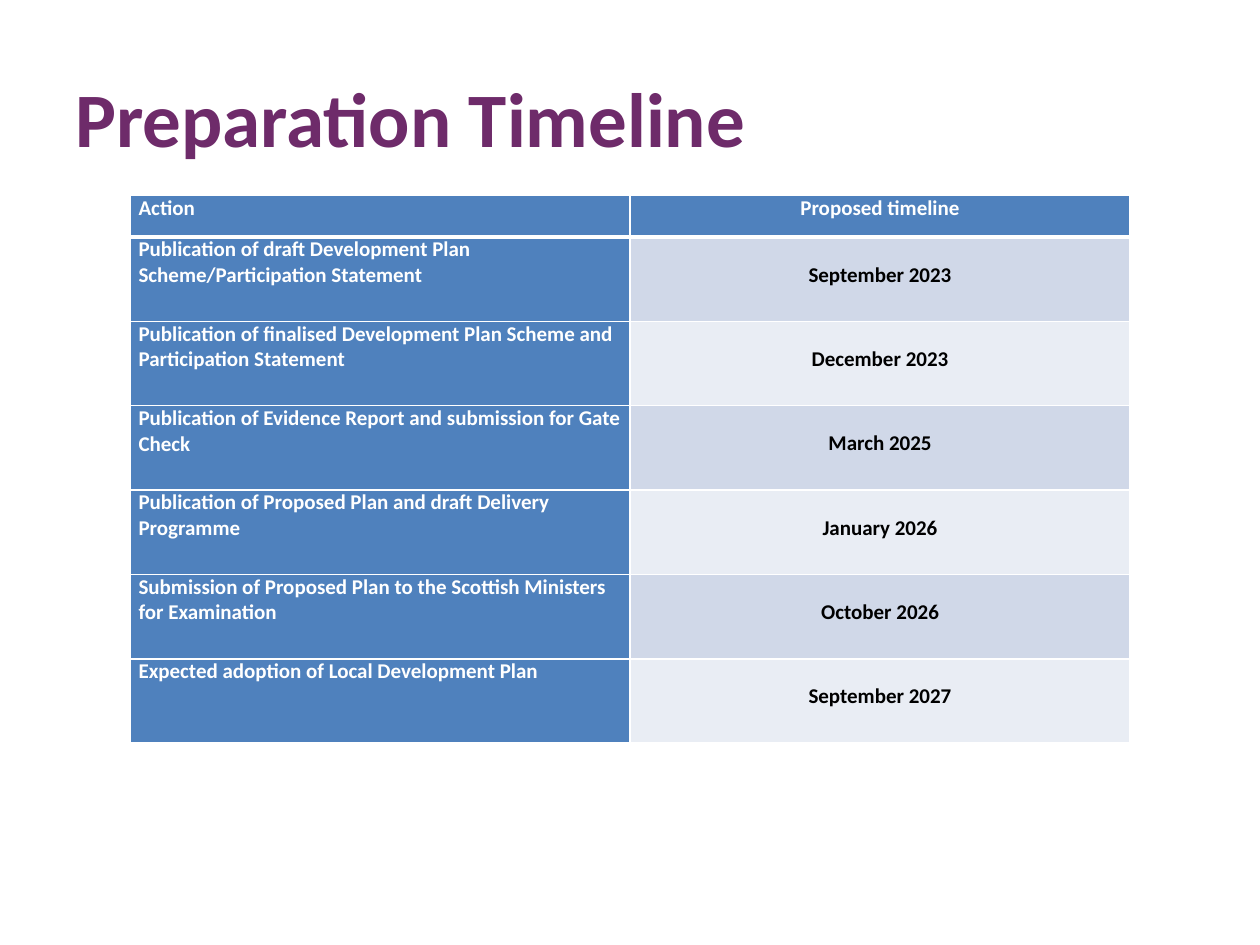
from typing import NamedTuple

from lxml import etree
from pptx import Presentation
from pptx.dml.color import RGBColor
from pptx.enum import text
from pptx.oxml import ns
from pptx.util import Inches, Pt

FONT = "Calibri"
HEX = {
    "plum": "6E2B6A",
    "blue": "4F81BD",
    "dark": "D0D8E8",
    "light": "E9EDF4",
    "white": "FFFFFF",
    "black": "000000",
}
LEFT, MID = text.PP_ALIGN.LEFT, text.PP_ALIGN.CENTER


class Step(NamedTuple):
    action: str
    date: str


class Look(NamedTuple):
    fill: str
    ink: str
    align: text.PP_ALIGN
    inset: float = 0


HEAD = Step("Action", "Proposed timeline")
STEPS = [
    Step("Publication of draft Development Plan Scheme/Participation Statement", "September 2023"),
    Step("Publication of finalised Development Plan Scheme and Participation Statement",
         "December 2023"),
    Step("Publication of Evidence Report and submission for Gate Check", "March 2025"),
    Step("Publication of Proposed Plan and draft Delivery Programme", "January 2026"),
    Step("Submission of Proposed Plan to the Scottish Ministers for Examination", "October 2026"),
    Step("Expected adoption of Local Development Plan", "September 2027"),
]


def write(frame, words: str, size: int, ink: str, align: text.PP_ALIGN) -> None:
    para = frame.paragraphs[0]
    para.alignment = align
    run = para.add_run()
    run.text = words
    run.font.name = FONT
    run.font.size = Pt(size)
    run.font.bold = True
    run.font.color.rgb = RGBColor.from_string(HEX[ink])


def edge(cell, top: int, bottom: int) -> None:
    """Draw white cell borders; top and bottom are widths in points."""
    props = cell._tc.get_or_add_tcPr()
    for side, width in {"L": 1, "R": 1, "T": top, "B": bottom}.items():
        line = etree.SubElement(props, ns.qn(f"a:ln{side}"), w=str(Pt(width)))
        solid = etree.SubElement(line, ns.qn("a:solidFill"))
        etree.SubElement(solid, ns.qn("a:srgbClr"), val=HEX["white"])


def paint(cell, words: str, look: Look, row: int) -> None:
    edge(cell, 3 if row == 1 else 1, 3 if row == 0 else 1)
    cell.fill.solid()
    cell.fill.fore_color.rgb = RGBColor.from_string(HEX[look.fill])
    cell.margin_left = cell.margin_right = Inches(0.07)
    cell.margin_top, cell.margin_bottom = Inches(look.inset), 0
    write(cell.text_frame, words, 12, look.ink, look.align)


def add_title(slide) -> None:
    box = slide.shapes.add_textbox(Inches(0.5), Inches(0.3), Inches(9), Inches(1.25))
    frame = box.text_frame
    frame.word_wrap = True
    frame.vertical_anchor = text.MSO_ANCHOR.MIDDLE
    write(frame, "Preparation Timeline", 44, "plum", LEFT)


def add_plan(slide) -> None:
    rows = [HEAD, *STEPS]
    table = slide.shapes.add_table(
        len(rows), 2, Inches(1.03), Inches(1.55), Inches(7.94), Inches(4.33)).table
    for col in table.columns:
        col.width = Inches(3.97)
    for i, step in enumerate(rows):
        table.rows[i].height = Inches(0.67 if i else 0.33)
        if i:
            look = Look("dark" if i % 2 else "light", "black", MID, 0.2)
        else:
            look = Look("blue", "white", MID)
        paint(table.cell(i, 0), step.action, Look("blue", "white", LEFT), i)
        paint(table.cell(i, 1), step.date, look, i)


def main() -> None:
    deck = Presentation()
    deck.slide_width, deck.slide_height = Inches(10), Inches(7.5)
    slide = deck.slides.add_slide(deck.slide_layouts[6])
    add_title(slide)
    add_plan(slide)
    deck.save("out.pptx")


if __name__ == "__main__":
    main()
